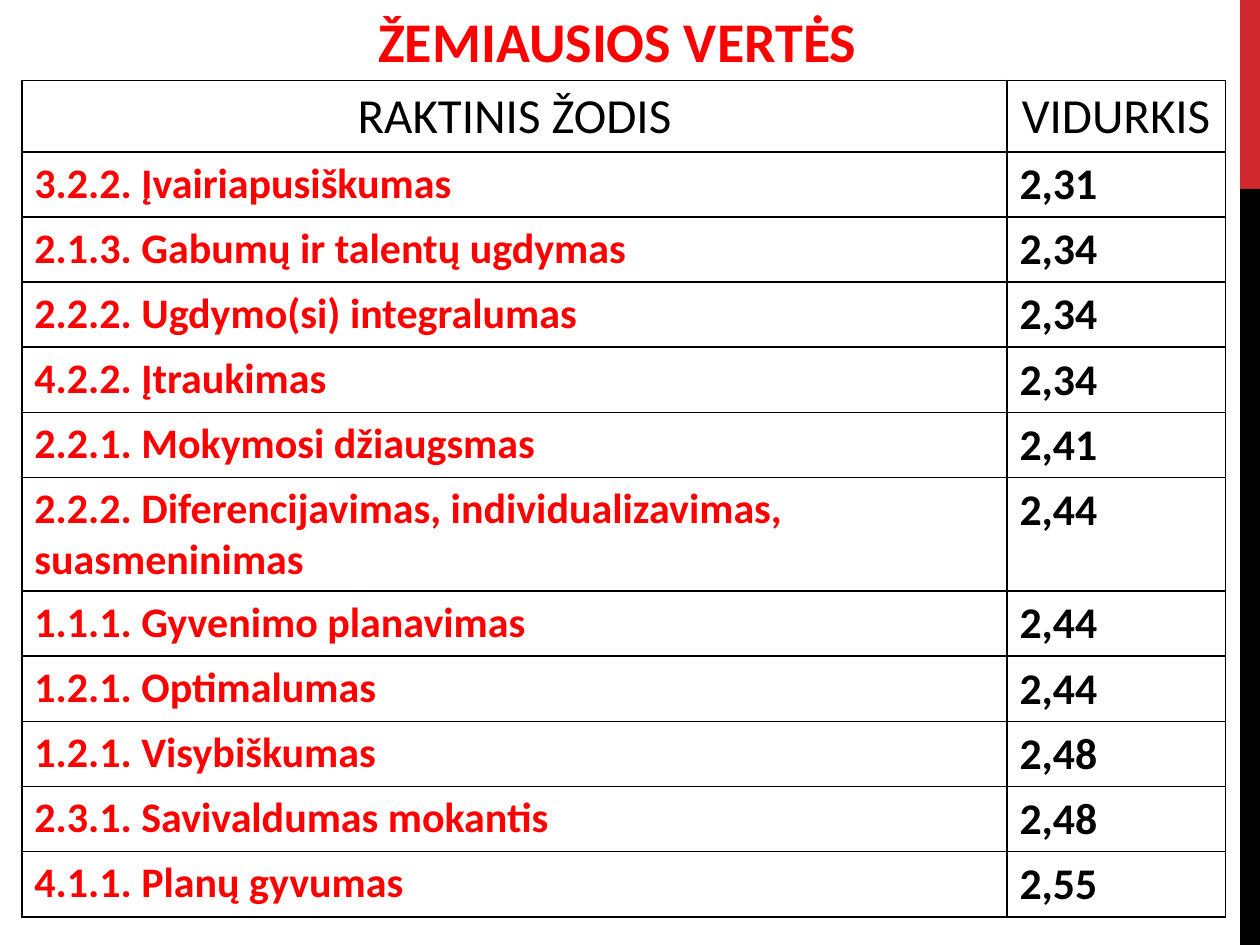
import pptx
import pptx.dml.color
import pptx.enum.shapes
import pptx.enum.text
import pptx.oxml
import pptx.oxml.ns
import pptx.util

Cm = pptx.util.Cm
Pt = pptx.util.Pt
CENTER = pptx.enum.text.PP_ALIGN.CENTER
LEFT = pptx.enum.text.PP_ALIGN.LEFT
RED = "FF0000"
BLACK = "000000"
ACCENT = "D1282E"

HEADER = ("RAKTINIS ŽODIS", "VIDURKIS")
VALUES = [
    ("3.2.2. Įvairiapusiškumas", "2,31"),
    ("2.1.3. Gabumų ir talentų ugdymas", "2,34"),
    ("2.2.2. Ugdymo(si) integralumas", "2,34"),
    ("4.2.2. Įtraukimas", "2,34"),
    ("2.2.1. Mokymosi džiaugsmas", "2,41"),
    ("2.2.2. Diferencijavimas, individualizavimas, suasmeninimas", "2,44"),
    ("1.1.1. Gyvenimo planavimas", "2,44"),
    ("1.2.1. Optimalumas", "2,44"),
    ("1.2.1. Visybiškumas", "2,48"),
    ("2.3.1. Savivaldumas mokantis", "2,48"),
    ("4.1.1. Planų gyvumas", "2,55"),
]
COLUMN_WIDTHS = (19.86, 4.4)
HEADER_HEIGHT, ROW_HEIGHT, TALL_ROW_HEIGHT = 1.44, 1.31, 2.29
TALL_ROW = 6


def color(value):
    return pptx.dml.color.RGBColor.from_string(value)


class SlideBuilder:
    font = "Calibri"

    def __init__(self, slide):
        self.slide = slide

    def set_text(self, text_frame, text, size, ink, bold, alignment=LEFT):
        text_frame.text = text
        text_frame.word_wrap = True
        paragraph = text_frame.paragraphs[0]
        paragraph.alignment = alignment
        for run in paragraph.runs:
            run.font.name = self.font
            run.font.size = Pt(size)
            run.font.bold = bold
            run.font.color.rgb = color(ink)

    def bar(self, left, top, width, height, fill):
        shape = self.slide.shapes.add_shape(
            pptx.enum.shapes.MSO_SHAPE.RECTANGLE,
            Cm(left), Cm(top), Cm(width), Cm(height))
        shape.shadow.inherit = False
        shape.fill.solid()
        shape.fill.fore_color.rgb = color(fill)
        shape.line.fill.background()

    def title(self, left, top, width, height, text):
        shape = self.slide.shapes.add_textbox(
            Cm(left), Cm(top), Cm(width), Cm(height))
        self.set_text(shape.text_frame, text, 32, RED, True, CENTER)

    def border(self, cell):
        properties = cell._tc.get_or_add_tcPr()
        namespace = pptx.oxml.ns.nsdecls("a")
        for position, side in enumerate(("lnL", "lnR", "lnT", "lnB")):
            line = pptx.oxml.parse_xml(
                f'<a:{side} {namespace} w="{Pt(1)}"><a:solidFill>'
                f'<a:srgbClr val="{BLACK}"/></a:solidFill></a:{side}>')
            properties.insert(position, line)

    def table(self, left, top, header, values, widths, heights):
        table = self.slide.shapes.add_table(
            len(heights), len(widths), Cm(left), Cm(top),
            Cm(sum(widths)), Cm(sum(heights))).table
        table.horz_banding = False
        for column, width in zip(table.columns, widths):
            column.width = Cm(width)
        for row, height in zip(table.rows, heights):
            row.height = Cm(height)
        for index, texts in enumerate([header, *values]):
            for column, text in enumerate(texts):
                cell = table.cell(index, column)
                cell.fill.background()
                self.border(cell)
                if index == 0:
                    self.set_text(cell.text_frame, text, 28, BLACK, False, CENTER)
                elif column == 0:
                    self.set_text(cell.text_frame, text, 24, RED, True)
                else:
                    self.set_text(cell.text_frame, text, 25, BLACK, True)


def main():
    presentation = pptx.Presentation()
    presentation.slide_width = Cm(25.4)
    presentation.slide_height = Cm(19.05)
    builder = SlideBuilder(
        presentation.slides.add_slide(presentation.slide_layouts[6]))

    builder.bar(25, 0, 0.4, 3.81, ACCENT)
    builder.bar(25, 3.81, 0.4, 15.24, BLACK)
    builder.title(0, 0, 24.9, 1.62, "ŽEMIAUSIOS VERTĖS")

    heights = [HEADER_HEIGHT] + [ROW_HEIGHT] * len(VALUES)
    heights[TALL_ROW] = TALL_ROW_HEIGHT
    builder.table(0.44, 1.62, HEADER, VALUES, COLUMN_WIDTHS, heights)

    presentation.save("out.pptx")


if __name__ == "__main__":
    main()
